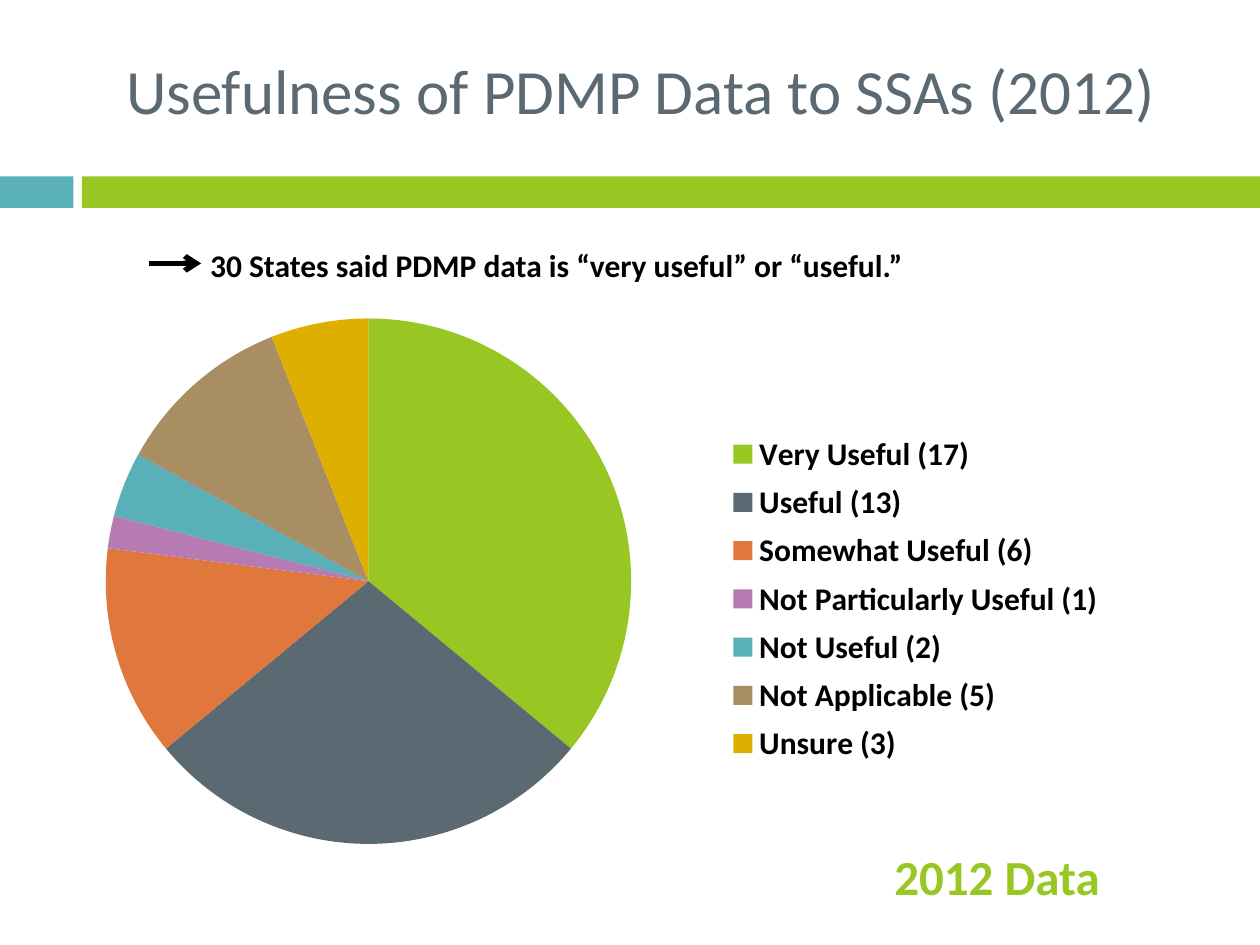
import pptx
import pptx.chart.data
import pptx.dml.color
import pptx.enum.chart
import pptx.enum.shapes
import pptx.enum.text
import pptx.oxml
import pptx.oxml.ns
import pptx.util
from lxml import etree

Pt = pptx.util.Pt
COLORS = {
    "green": "98C723", "slate": "5B6973", "orange": "E0773C", "purple": "B77BB4",
    "teal": "59B0B9", "tan": "A98D63", "gold": "DEAE00", "black": "000000",
}
# Label, share in percent, colour
ANSWERS = [
    ("Very Useful (17)", 36, "green"),
    ("Useful (13)", 28, "slate"),
    ("Somewhat Useful (6)", 13, "orange"),
    ("Not Particularly Useful (1)", 2, "purple"),
    ("Not Useful (2)", 4, "teal"),
    ("Not Applicable (5)", 11, "tan"),
    ("Unsure (3)", 6, "gold"),
]


def rgb(name):
    return pptx.dml.color.RGBColor.from_string(COLORS[name])


def set_layout(element, position, fractions, inner=False):
    """Place a chart part by fractions of the chart's width and height."""
    qn = pptx.oxml.ns.qn
    for old in element.findall(qn("c:layout")):
        element.remove(old)
    layout = etree.Element(qn("c:layout"))
    manual = etree.SubElement(layout, qn("c:manualLayout"))
    settings = [("layoutTarget", "inner")] if inner else []
    settings += [("xMode", "edge"), ("yMode", "edge")]
    settings += zip("xywh", fractions)
    for tag, value in settings:
        etree.SubElement(manual, qn("c:" + tag)).set("val", str(value))
    element.insert(position, layout)


class SlideBuilder:
    font = "Calibri"

    def __init__(self, slide):
        self.slide = slide

    def style(self, font, size, color, bold=False):
        font.name, font.size, font.bold = self.font, Pt(size), bold
        font.color.rgb = rgb(color)

    def bar(self, left, top, width, height, color):
        shape = self.slide.shapes.add_shape(
            pptx.enum.shapes.MSO_SHAPE.RECTANGLE, Pt(left), Pt(top), Pt(width), Pt(height))
        shape.shadow.inherit = False
        shape.fill.solid()
        shape.fill.fore_color.rgb = rgb(color)
        shape.line.fill.background()

    def text(self, left, top, width, height, words, size, color, bold=True, title=False):
        frame = self.slide.shapes.add_textbox(
            Pt(left), Pt(top), Pt(width), Pt(height)).text_frame
        frame.word_wrap = True
        paragraph = frame.paragraphs[0]
        paragraph.text = words
        self.style(paragraph.font, size, color, bold)
        if title:
            frame.vertical_anchor = pptx.enum.text.MSO_ANCHOR.MIDDLE
            paragraph.alignment = pptx.enum.text.PP_ALIGN.CENTER
        else:
            frame.auto_size = pptx.enum.text.MSO_AUTO_SIZE.SHAPE_TO_FIT_TEXT

    def arrow(self, left, top, right, bottom, width, color):
        connector = self.slide.shapes.add_connector(
            pptx.enum.shapes.MSO_CONNECTOR.STRAIGHT, Pt(left), Pt(top), Pt(right), Pt(bottom))
        connector.line.width = Pt(width)
        connector.line.color.rgb = rgb(color)
        qn = pptx.oxml.ns.qn
        etree.SubElement(connector.line._get_or_add_ln(), qn("a:tailEnd")).set("type", "arrow")
        etree.SubElement(connector._element.spPr, qn("a:effectLst"))

    def pie(self, left, top, width, height, answers):
        data = pptx.chart.data.CategoryChartData()
        data.categories = [label for label, _, _ in answers]
        data.add_series("Series 1", [share for _, share, _ in answers])
        chart = self.slide.shapes.add_chart(
            pptx.enum.chart.XL_CHART_TYPE.PIE,
            Pt(left), Pt(top), Pt(width), Pt(height), data).chart
        self.style(chart.font, 10, "black")
        chart.has_title = False
        plot = chart.plots[0]
        plot.vary_by_categories = True
        for index, (_, _, color) in enumerate(answers):
            fill = plot.series[0].points[index].format.fill
            fill.solid()
            fill.fore_color.rgb = rgb(color)
        chart.has_legend = True
        legend = chart.legend
        legend.position = pptx.enum.chart.XL_LEGEND_POSITION.RIGHT
        legend.include_in_layout = False
        self.style(legend.font, 18, "black", bold=True)
        set_layout(chart._chartSpace.chart.plotArea, 0, (0.058, 0.095, 0.482, 0.815), inner=True)
        set_layout(legend._element, 1, (0.62, 0.26, 0.36, 0.54))


def main():
    presentation = pptx.Presentation()
    presentation.slide_width, presentation.slide_height = Pt(720), Pt(540)
    builder = SlideBuilder(presentation.slides.add_slide(presentation.slide_layouts[6]))

    # Title and divider band
    builder.bar(0, 100.8, 42, 18, "teal")
    builder.bar(46.8, 100.8, 673.2, 18, "green")
    builder.text(48, 6, 636, 90, "Usefulness of PDMP Data to SSAs (2012)", 36, "slate",
                 bold=False, title=True)

    # Answers of the states
    builder.pie(24, 147, 624, 368.5, ANSWERS)

    # Year label and key finding
    builder.text(504, 480, 138, 41, "2012 Data", 28, "green")
    builder.text(113, 137, 534, 29,
                 "30 States said PDMP data is “very useful” or “useful.”", 18, "black")
    builder.arrow(85, 150.5, 115, 150.5, 3, "black")

    presentation.save("out.pptx")


if __name__ == "__main__":
    main()
